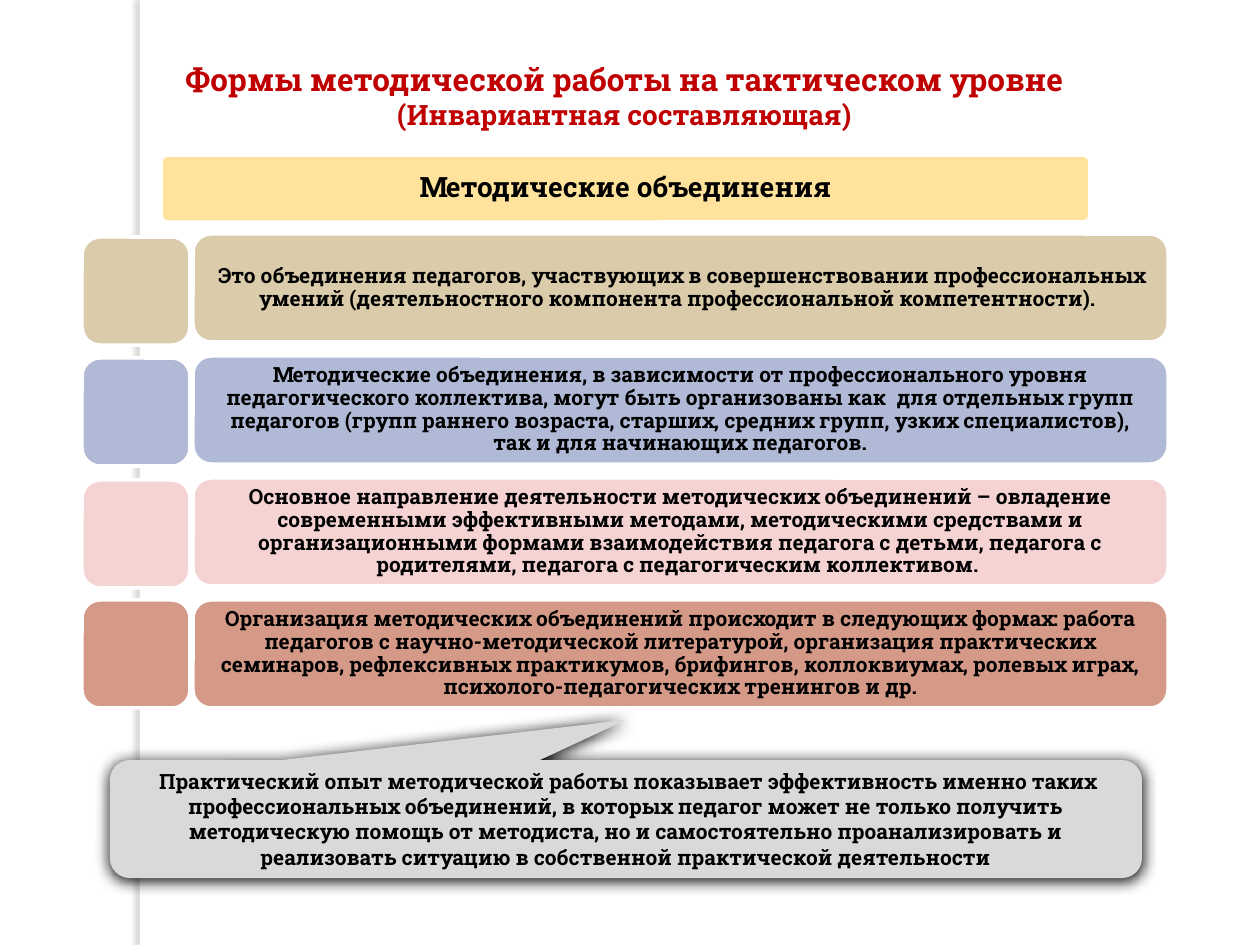
"""Build a slide on methodical associations with four described points and a callout."""
from dataclasses import dataclass

from lxml import etree
from pptx import Presentation
from pptx.dml.color import RGBColor
from pptx.enum.shapes import MSO_SHAPE
from pptx.enum.text import MSO_ANCHOR, MSO_AUTO_SIZE, PP_ALIGN
from pptx.oxml.ns import qn
from pptx.util import Emu, Pt

RECT = MSO_SHAPE.RECTANGLE
ROUNDED = MSO_SHAPE.ROUNDED_RECTANGLE
CALLOUT = MSO_SHAPE.ROUNDED_RECTANGULAR_CALLOUT
CENTER = PP_ALIGN.CENTER
TOP, MIDDLE = MSO_ANCHOR.TOP, MSO_ANCHOR.MIDDLE
NO_AUTOFIT = MSO_AUTO_SIZE.NONE

FONT = "Roboto Slab"
BLACK = RGBColor(0x00, 0x00, 0x00)
WHITE = RGBColor(0xFF, 0xFF, 0xFF)
RED = RGBColor(0xC0, 0x00, 0x00)
YELLOW = RGBColor(0xFF, 0xE3, 0x9D)
SAND = RGBColor(0xDA, 0xCC, 0xAB)
BLUE = RGBColor(0xB0, 0xBA, 0xD7)
PINK = RGBColor(0xF5, 0xD3, 0xD3)
TERRACOTTA = RGBColor(0xD5, 0x99, 0x88)
GREY = RGBColor(0xD9, 0xD9, 0xD9)
BAR_SHADOW = RGBColor(0x73, 0x6F, 0x63)

PX_PER_INCH = 126
SLIDE_W, SLIDE_H = 1260, 945
TILE_LEFT, TILE_SIZE = 82, 108
CARD_LEFT, CARD_TOP, CARD_W, CARD_PITCH = 193, 234, 975, 122


@dataclass(frozen=True)
class Box:
    left: int
    top: int
    width: int
    height: int


@dataclass(frozen=True)
class Run:
    text: str
    size: int
    color: RGBColor = BLACK
    bold: bool = True


@dataclass(frozen=True)
class Point:
    fill: RGBColor
    tile_drop: int
    runs: tuple[Run, ...]


@dataclass(frozen=True)
class Shadow:
    color: RGBColor
    alpha: int
    blur: float
    distance: int
    angle: int


TITLE = (
    Run("Формы методической работы на тактическом уровне ", 18, RED),
    Run("(Инвариантная составляющая)", 16, RED),
)
HEADER = (Run("Методические объединения", 16),)
POINTS = (
    Point(SAND, 3, (
        Run(" ", 10),
        Run("Это объединения педагогов, участвующих в совершенствовании "
            "профессиональных умений (деятельностного компонента "
            "профессиональной компетентности). ", 12),
    )),
    Point(BLUE, 2, (
        Run("Методические объединения, в зависимости от профессионального уровня "
            "педагогического коллектива, могут быть организованы как  для отдельных "
            "групп педагогов (групп раннего возраста, старших, средних групп, узких "
            "специалистов), так и для начинающих педагогов.", 12),
    )),
    Point(PINK, 2, (
        Run("Основное направление деятельности методических объединений – овладение "
            "современными эффективными методами, методическими средствами и "
            "организационными формами взаимодействия педагога с детьми, педагога с "
            "родителями, педагога с педагогическим коллективом. ", 12),
    )),
    Point(TERRACOTTA, 0, (
        Run("Организация методических объединений происходит в следующих формах: "
            "работа педагогов с научно-методической литературой, организация "
            "практических семинаров, рефлексивных практикумов, брифингов, "
            "коллоквиумах, ролевых играх, психолого-педагогических тренингов и др.", 12),
    )),
)
CONCLUSION = (
    Run(" ", 12, WHITE, False),
    Run("Практический опыт методической работы показывает эффективность именно таких "
        "профессиональных объединений, в которых педагог может не только получить "
        "методическую помощь от методиста, но и самостоятельно проанализировать и "
        "реализовать ситуацию в собственной практической деятельности", 12),
)


def px(value: int) -> Emu:
    return Emu(round(value * 914400 / PX_PER_INCH))


def place(sp, box: Box) -> None:
    sp.left, sp.top = px(box.left), px(box.top)
    sp.width, sp.height = px(box.width), px(box.height)


def write(sp, runs: tuple[Run, ...], margin: int, spacing: float = 1.0, anchor=MIDDLE) -> None:
    tf = sp.text_frame
    tf.word_wrap = True
    tf.auto_size = NO_AUTOFIT
    tf.vertical_anchor = anchor
    tf.margin_left = tf.margin_right = px(margin)
    tf.margin_top = tf.margin_bottom = px(min(margin, 11) // 2 if anchor == TOP else margin)
    p = tf.paragraphs[0]
    p.alignment = CENTER
    p.line_spacing = spacing
    for run in runs:
        r = p.add_run()
        r.text = run.text
        r.font.name = FONT
        r.font.size = Pt(run.size)
        r.font.bold = run.bold
        r.font.color.rgb = run.color


def add_block(slide, kind, box: Box, fill: RGBColor, outlined: bool = False):
    sp = slide.shapes.add_shape(kind, 0, 0, 0, 0)
    place(sp, box)
    sp.shadow.inherit = False
    sp.fill.solid()
    sp.fill.fore_color.rgb = fill
    if outlined:
        sp.line.color.rgb = WHITE
        sp.line.width = Pt(2)
    else:
        sp.line.fill.background()
    return sp


def cast_shadow(sp, shadow: Shadow) -> None:
    effects = sp.element.spPr.find(qn("a:effectLst"))
    outer = etree.SubElement(
        effects, qn("a:outerShdw"), blurRad=str(Pt(shadow.blur)),
        dist=str(Pt(shadow.distance)), dir=str(shadow.angle * 60000),
        algn="ctr", rotWithShape="0")
    color = etree.SubElement(outer, qn("a:srgbClr"), val=str(shadow.color))
    etree.SubElement(color, qn("a:alpha"), val=str(shadow.alpha * 1000))


def add_point(slide, index: int, point: Point) -> None:
    top = CARD_TOP + index * CARD_PITCH
    tile = Box(TILE_LEFT, top + point.tile_drop, TILE_SIZE, TILE_SIZE)
    card = Box(CARD_LEFT, top, CARD_W, TILE_SIZE)
    add_block(slide, ROUNDED, tile, point.fill, outlined=True)
    sp = add_block(slide, ROUNDED, card, point.fill, outlined=True)
    write(sp, point.runs, 11, 0.9)


def main() -> None:
    prs = Presentation()
    prs.slide_width, prs.slide_height = px(SLIDE_W), px(SLIDE_H)
    slide = prs.slides.add_slide(prs.slide_layouts[5])

    bar = add_block(slide, RECT, Box(140, 0, 10, SLIDE_H), WHITE)
    cast_shadow(bar, Shadow(BAR_SHADOW, 25, 3, 3, 180))

    title = slide.shapes.title
    place(title, Box(74, 55, 1101, 84))
    write(title, TITLE, 13, anchor=TOP)

    header = add_block(slide, ROUNDED, Box(161, 155, 929, 67), YELLOW, outlined=True)
    header.adjustments[0] = 0.1
    write(header, HEADER, 4, 0.9)

    for index, point in enumerate(POINTS):
        add_point(slide, index, point)

    callout = add_block(slide, CALLOUT, Box(110, 760, 1032, 118), GREY)
    callout.adjustments[0] = 0
    callout.adjustments[1] = -0.84
    cast_shadow(callout, Shadow(BLACK, 100, 8.5, 1, 90))
    write(callout, CONCLUSION, 12)

    prs.save("out.pptx")


if __name__ == "__main__":
    main()
